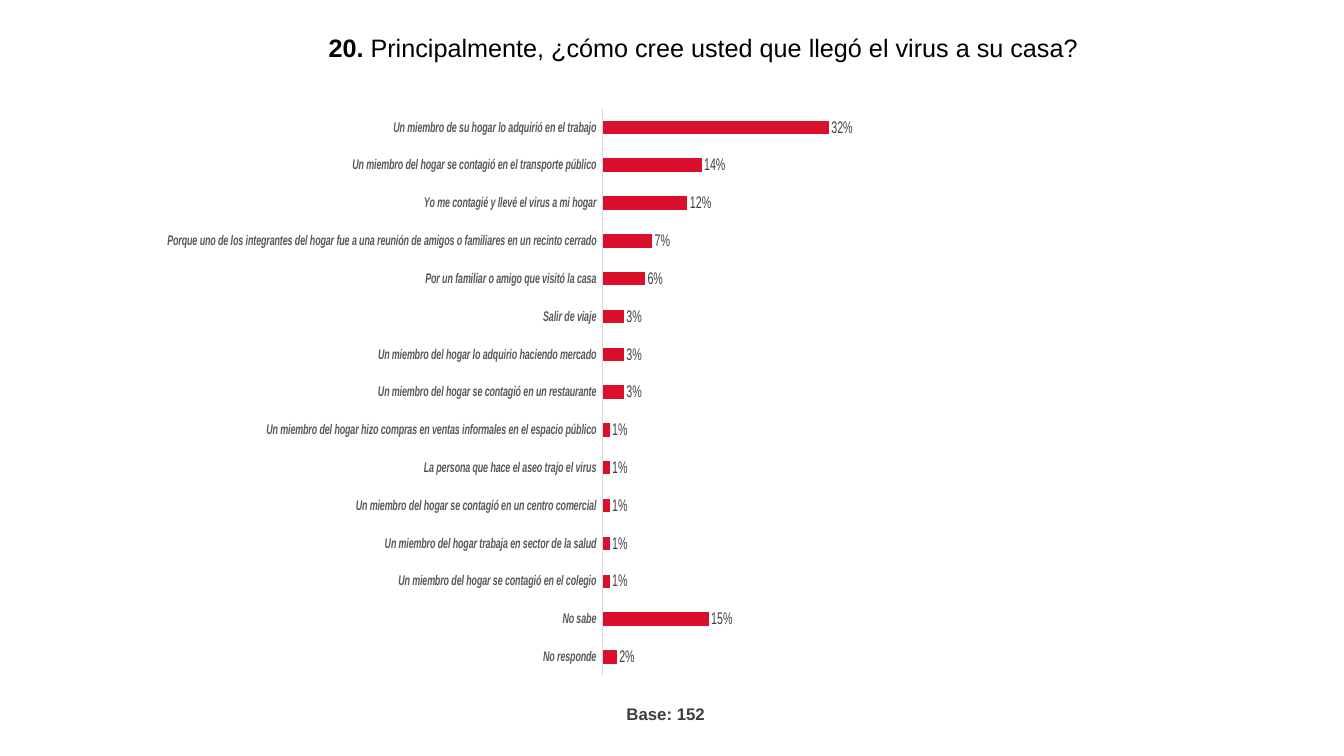
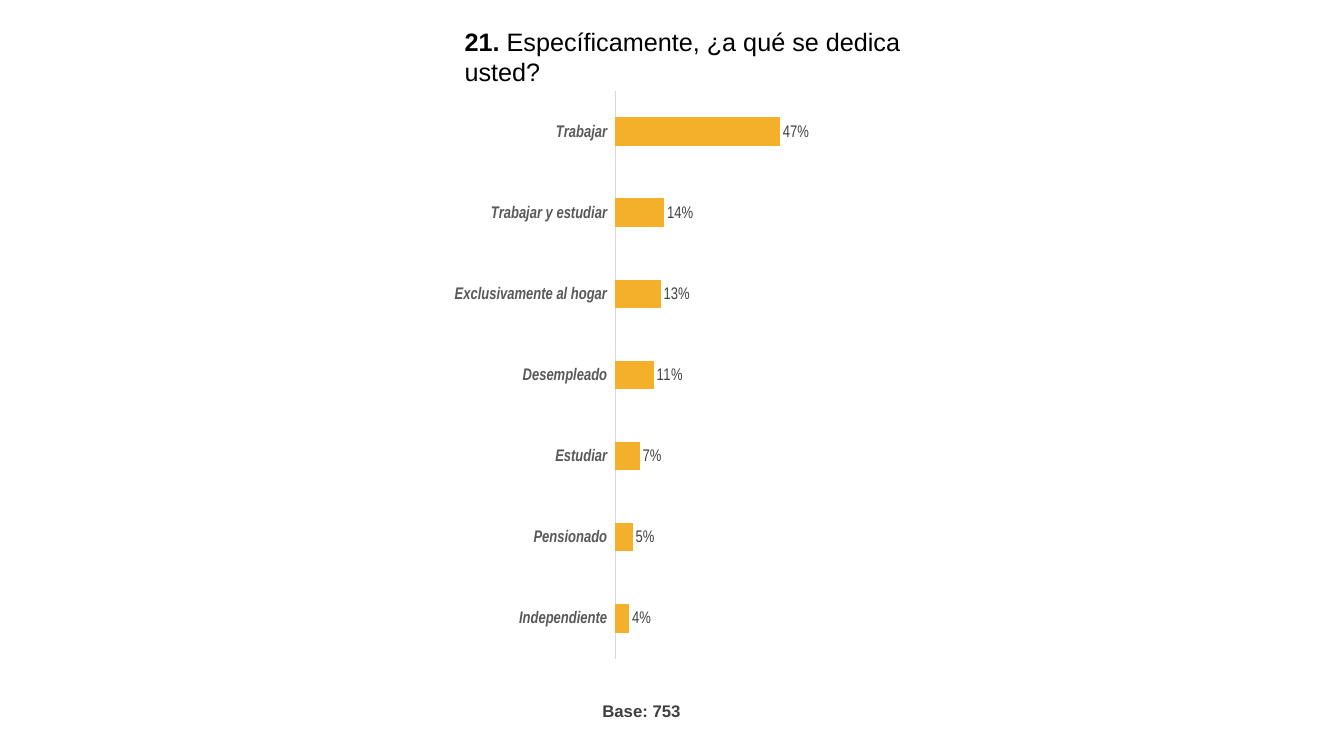
from dataclasses import dataclass
from lxml.etree import SubElement
from pptx import Presentation
from pptx.chart.data import CategoryChartData
from pptx.dml.color import RGBColor
from pptx.enum.chart import XL_CHART_TYPE, XL_LABEL_POSITION, XL_TICK_LABEL_POSITION, XL_TICK_MARK
from pptx.enum.text import PP_ALIGN
from pptx.oxml.ns import qn
from pptx.util import Inches, Pt


@dataclass(frozen=True)
class Theme:
    face: str = "Arial"
    black: str = "000000"
    base: str = "3F3F3F"
    value: str = "404040"
    label: str = "595959"
    rule: str = "D9D9D9"
    red: str = "DA0F2B"
    gold: str = "F5B02B"
    head: int = 18
    text: int = 12
    small: int = 10


theme = Theme()
plot_box = {"x": 0.01, "y": 0.05, "w": 0.33, "h": 0.95}


def style(font, size, color, bold=False):
    font.name = theme.face
    font.size = Pt(size)
    font.bold = bold
    font.color.rgb = RGBColor.from_string(color)


def add_text(slide, box, runs, size, color):
    frame = slide.shapes.add_textbox(*map(Inches, box)).text_frame
    frame.word_wrap = True
    para = frame.paragraphs[0]
    for words, bold in runs:
        run = para.add_run()
        run.text = words
        style(run.font, size, color, bold)
    return para


pages = [
    {
        "title": ("20. ", "Principalmente, ¿cómo cree usted que llegó el virus a su casa?"),
        "title_box": (3.16, 0.27, 7.85, 0.4),
        "base": "Base: 152",
        "base_box": (5.79, 6.97, 1.3, 0.25),
        "chart_box": (1.66, 0.78, 11.68, 5.93),
        "color": theme.red,
        "size": theme.small,
        "rows": [
            ("No responde", 0.02),
            ("No sabe", 0.15),
            ("Un miembro del hogar se contagió en el colegio", 0.01),
            ("Un miembro del hogar trabaja en sector de la salud", 0.01),
            ("Un miembro del hogar se contagió en un centro comercial", 0.01),
            ("La persona que hace el aseo trajo el virus", 0.01),
            ("Un miembro del hogar hizo compras en ventas informales en el espacio público", 0.01),
            ("Un miembro del hogar se contagió en un restaurante", 0.03),
            ("Un miembro del hogar lo adquirio haciendo mercado", 0.03),
            ("Salir de viaje", 0.03),
            ("Por un familiar o amigo que visitó la casa", 0.06),
            ("Porque uno de los integrantes del hogar fue a una reunión de amigos"
             " o familiares en un recinto cerrado", 0.07),
            ("Yo me contagié y llevé el virus a mi hogar", 0.12),
            ("Un miembro del hogar se contagió en el transporte público", 0.14),
            ("Un miembro de su hogar lo adquirió en el trabajo", 0.32),
        ],
    },
    {
        "title": ("21. ", "Específicamente, ¿a qué se dedica usted?"),
        "title_box": (4.51, 0.21, 4.93, 0.4),
        "base": "Base: 753",
        "base_box": (5.55, 6.94, 1.3, 0.25),
        "chart_box": (4.51, 0.61, 6.81, 5.93),
        "color": theme.gold,
        "size": theme.text,
        "rows": [
            ("Independiente", 0.04),
            ("Pensionado", 0.05),
            ("Estudiar", 0.07),
            ("Desempleado", 0.11),
            ("Exclusivamente al hogar", 0.13),
            ("Trabajar y estudiar", 0.14),
            ("Trabajar", 0.47),
        ],
    },
]

deck = Presentation()
deck.slide_width = Inches(13.33)
deck.slide_height = Inches(7.5)

for page in pages:
    slide = deck.slides.add_slide(deck.slide_layouts[6])

    data = CategoryChartData(number_format="0%")
    data.categories = [name for name, _ in page["rows"]]
    data.add_series("Series 1", [value for _, value in page["rows"]])
    chart = slide.shapes.add_chart(
        XL_CHART_TYPE.BAR_CLUSTERED, *map(Inches, page["chart_box"]), data
    ).chart
    style(chart.font, theme.small, theme.black)
    chart.has_title = False
    chart.has_legend = False

    axis = chart.category_axis
    axis.has_major_gridlines = False
    axis.major_tick_mark = XL_TICK_MARK.NONE
    axis.minor_tick_mark = XL_TICK_MARK.NONE
    axis.tick_label_position = XL_TICK_LABEL_POSITION.LOW
    axis.format.line.color.rgb = RGBColor.from_string(theme.rule)
    axis.format.line.width = Pt(0.75)
    style(axis.tick_labels.font, page["size"], theme.label, True)
    axis.tick_labels.font.italic = True

    scale = chart.value_axis
    scale.has_major_gridlines = False
    scale.visible = False
    scale.tick_labels.number_format = "0%"
    scale.tick_labels.number_format_is_linked = False

    plot = chart.plots[0]
    plot.gap_width = 182
    plot.vary_by_categories = False
    bars = plot.series[0].format.fill
    bars.solid()
    bars.fore_color.rgb = RGBColor.from_string(page["color"])
    plot.has_data_labels = True
    labels = plot.data_labels
    labels.show_value = True
    labels.position = XL_LABEL_POSITION.OUTSIDE_END
    labels.number_format = "0%"
    labels.number_format_is_linked = False
    style(labels.font, theme.text, theme.value)

    area = chart.element.find(".//" + qn("c:plotArea"))
    for old in area.findall(qn("c:layout")):
        area.remove(old)
    layout = SubElement(area, qn("c:layout"))
    area.insert(0, layout)
    manual = SubElement(layout, qn("c:manualLayout"))
    SubElement(manual, qn("c:layoutTarget")).set("val", "inner")
    for side in "xy":
        SubElement(manual, qn(f"c:{side}Mode")).set("val", "edge")
    for key, value in plot_box.items():
        SubElement(manual, qn(f"c:{key}")).set("val", str(value))

    mark, words = page["title"]
    add_text(slide, page["title_box"], [(mark, True), (words, False)], theme.head, theme.black)
    base = add_text(slide, page["base_box"], [(page["base"], True)], theme.text, theme.base)
    base.alignment = PP_ALIGN.RIGHT
    base.line_spacing = 0.83

deck.save("out.pptx")
